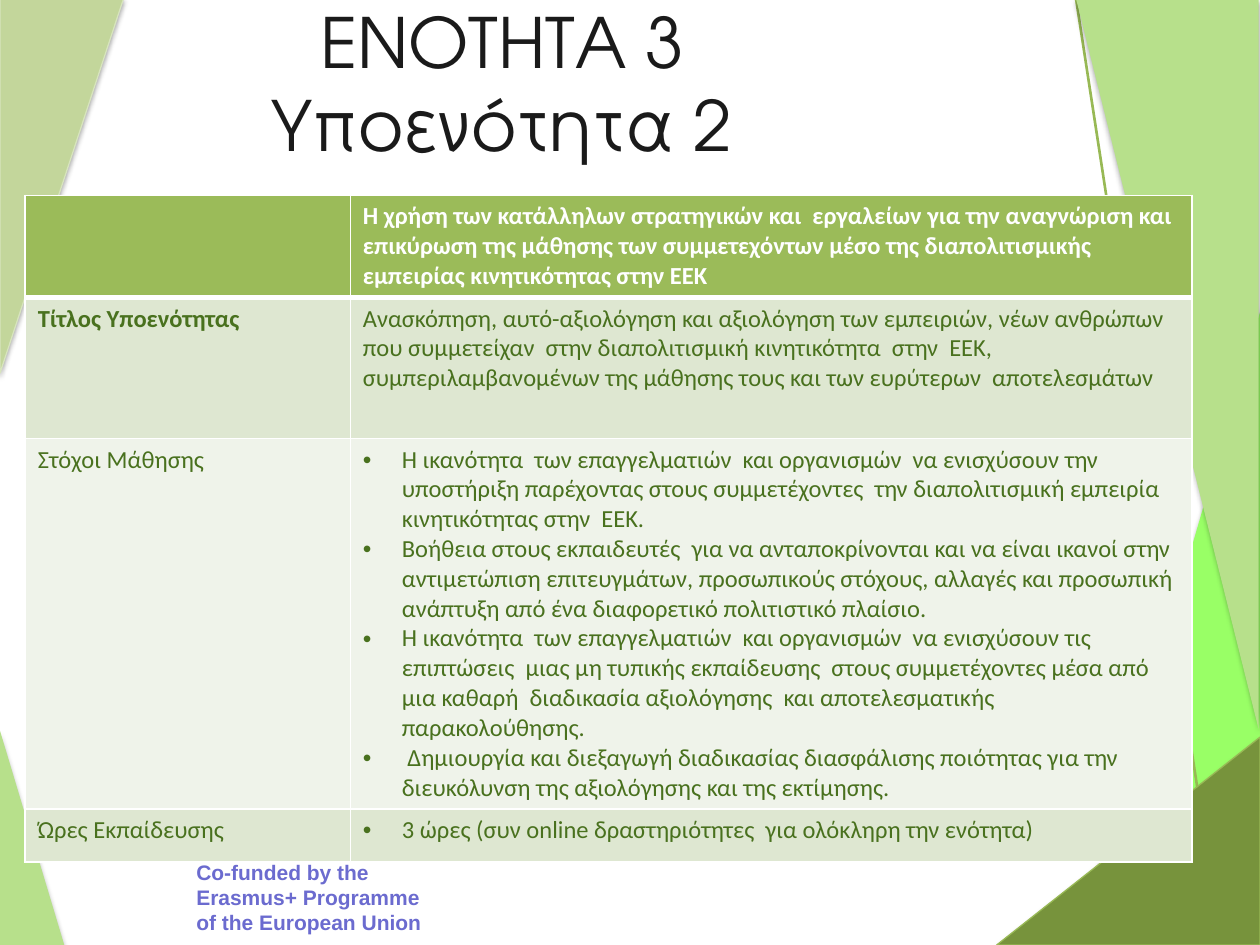
from lxml import etree
from pptx import Presentation
from pptx import util as u
from pptx.dml.color import RGBColor
from pptx.enum import shapes, text
from pptx.oxml.ns import qn

WHITE = RGBColor(0xFF, 0xFF, 0xFF)
INK = RGBColor(0x1A, 0x1A, 0x1A)
VIOLET = RGBColor(0x6B, 0x6B, 0xCF)
LEAF = RGBColor(0x49, 0x71, 0x1E)
HEAD = RGBColor(0x9B, 0xBB, 0x59)
BAND = RGBColor(0xDE, 0xE7, 0xD1)
PALE = RGBColor(0xEF, 0xF3, 0xEA)
EDGE = RGBColor(0x98, 0xB9, 0x55)
NEON = RGBColor(0x99, 0xFF, 0x66)
LIME = RGBColor(0xB7, 0xE0, 0x8B)
SAGE = RGBColor(0xC3, 0xD6, 0x9B)
MIST = RGBColor(0xD7, 0xE4, 0xBD)
MOSS = RGBColor(0x77, 0x93, 0x3C)

COLS = [2.58, 6.68]
ROWS = [0.8, 1.12, 2.92, 0.42]
GOALS = [
    "Η ικανότητα  των επαγγελματιών  και οργανισμών  να ενισχύσουν την υποστήριξη "
    "παρέχοντας στους συμμετέχοντες  την διαπολιτισμική εμπειρία κινητικότητας στην  ΕΕΚ.",
    "Βοήθεια στους εκπαιδευτές  για να ανταποκρίνονται και να είναι ικανοί στην "
    "αντιμετώπιση επιτευγμάτων, προσωπικούς στόχους, αλλαγές και προσωπική ανάπτυξη "
    "από ένα διαφορετικό πολιτιστικό πλαίσιο.",
    "Η ικανότητα  των επαγγελματιών  και οργανισμών  να ενισχύσουν τις επιπτώσεις  "
    "μιας μη τυπικής εκπαίδευσης  στους συμμετέχοντες μέσα από μια καθαρή  διαδικασία "
    "αξιολόγησης  και αποτελεσματικής παρακολούθησης.",
    " Δημιουργία και διεξαγωγή διαδικασίας διασφάλισης ποιότητας για την διευκόλυνση "
    "της αξιολόγησης και της εκτίμησης.",
]
# Each row: fill, label, lines, format of the label, format of the lines
BODY = [
    (HEAD, "", ["Η χρήση των κατάλληλων στρατηγικών και  εργαλείων για την αναγνώριση και "
                "επικύρωση της μάθησης των συμμετεχόντων μέσο της διαπολιτισμικής "
                "εμπειρίας κινητικότητας στην ΕΕΚ"], {}, {"color": WHITE, "bold": True}),
    (BAND, "Τίτλος Υποενότητας",
     ["Ανασκόπηση, αυτό-αξιολόγηση και αξιολόγηση των εμπειριών, νέων ανθρώπων που "
      "συμμετείχαν  στην διαπολιτισμική κινητικότητα  στην  ΕΕΚ, συμπεριλαμβανομένων "
      "της μάθησης τους και των ευρύτερων  αποτελεσμάτων"], {"bold": True}, {}),
    (PALE, "Στόχοι Μάθησης", GOALS, {}, {"bullet": True}),
    (BAND, "Ώρες Εκπαίδευσης",
     ["3 ώρες (συν online δραστηριότητες  για ολόκληρη την ενότητα)"], {}, {"bullet": True}),
]


def put(frame, lines, size=14, font="Calibri", color=LEAF, bold=False,
        align=None, bullet=False):
    """Fill a text frame with one paragraph per line."""
    for i, line in enumerate(lines):
        para = frame.add_paragraph() if i else frame.paragraphs[0]
        para.text = line
        para.alignment = align
        if bullet:
            props = para._p.get_or_add_pPr()
            props.set("marL", str(u.Inches(0.31)))
            props.set("indent", str(u.Inches(-0.31)))
            etree.SubElement(props, qn("a:buFont"), typeface="Arial")
            etree.SubElement(props, qn("a:buChar"), char="•")
        for run in para.runs:
            run.font.size = u.Pt(size)
            run.font.name = font
            run.font.bold = bold
            run.font.color.rgb = color


def paint(parent, color):
    """Add a solid fill element and return its colour."""
    fill = etree.SubElement(parent, qn("a:solidFill"))
    return etree.SubElement(fill, qn("a:srgbClr"), val=str(color))


def wedge(slide, box, fill, flip="", turn=0, line=None, alpha=35, dist=1.8):
    """Draw a right triangle with a soft shadow below it."""
    shape = slide.shapes.add_shape(shapes.MSO_SHAPE.RIGHT_TRIANGLE, *map(u.Inches, box))
    shape.rotation = turn
    for axis in flip:
        shape.element.spPr.xfrm.set("flip" + axis, "1")
    shape.fill.solid()
    shape.fill.fore_color.rgb = fill
    if line:
        shape.line.color.rgb = line
        shape.line.width = u.Pt(0.75)
    else:
        shape.line.fill.background()
    shape.shadow.inherit = False
    effect = shape.element.spPr.find(qn("a:effectLst"))
    shade = etree.SubElement(effect, qn("a:outerShdw"), blurRad=str(u.Pt(3.1)),
                             dist=str(u.Pt(dist)), dir="5400000", rotWithShape="0")
    etree.SubElement(paint_shade(shade), qn("a:alpha"), val=str(alpha * 1000))


def paint_shade(shade):
    """Give a shadow its black colour."""
    return etree.SubElement(shade, qn("a:srgbClr"), val="000000")


def stroke(slide, *ends):
    """Draw a thin green line."""
    line = slide.shapes.add_connector(shapes.MSO_CONNECTOR.STRAIGHT, *map(u.Inches, ends))
    line.line.color.rgb = EDGE
    line.line.width = u.Pt(1.5)
    etree.SubElement(line.element.spPr, qn("a:effectLst"))


def dress(cell, fill, base):
    """Set white borders and the fill of a cell."""
    props = cell._tc.get_or_add_tcPr()
    for side in "LRTB":
        width = base if side == "B" else 1
        paint(etree.SubElement(props, qn("a:ln" + side), w=str(u.Pt(width))), WHITE)
    cell.fill.solid()
    cell.fill.fore_color.rgb = fill


def grid(slide):
    """Build the table of the subunit."""
    area = map(u.Inches, (0.2, 1.55, sum(COLS), sum(ROWS)))
    table = slide.shapes.add_table(len(ROWS), len(COLS), *area).table
    for col, width in zip(table.columns, COLS):
        col.width = u.Inches(width)
    for i, (fill, label, lines, left, right) in enumerate(BODY):
        table.rows[i].height = u.Inches(ROWS[i])
        for j, (words, style) in enumerate((([label], left), (lines, right))):
            cell = table.cell(i, j)
            dress(cell, fill, 1 if i else 3)
            put(cell.text_frame, words, **style)


def decor(slide):
    """Draw the side wedges, the lines and the funding note."""
    wedge(slide, (8.54, 2.41, 1.48, 5.09), NEON, "H", alpha=38, dist=1.6)
    note = slide.shapes.add_textbox(*map(u.Inches, (1.46, 6.77, 2, 0.71))).text_frame
    note.word_wrap = True
    put(note, ["Co-funded by the Erasmus+ Programme of the European Union"],
        size=12, font="Arial", color=VIOLET, bold=True)
    wedge(slide, (0, 5.8, 0.51, 1.7), LIME)
    wedge(slide, (0, -0.01, 0.98, 2.97), SAGE, "H", turn=180, line=MIST)
    stroke(slide, 8.96, 7.5, 9.3, 2.1)
    stroke(slide, 9.65, 7.21, 8.54, -0.01)
    wedge(slide, (8.54, -0.01, 1.45, 5.8), LIME, "HV")
    wedge(slide, (7.91, 5.85, 2.09, 1.65), MOSS, "V", turn=180, line=EDGE)


def head(slide):
    """Place the title above the side wedges."""
    title = slide.shapes.title
    title.left, title.top, title.width, title.height = map(u.Inches, (0.75, 0.03, 6.47, 1.25))
    frame = title.text_frame
    frame.auto_size = text.MSO_AUTO_SIZE.NONE
    frame.vertical_anchor = text.MSO_ANCHOR.MIDDLE
    put(frame, ["ΕΝΟΤΗΤΑ 3\vΥποενότητα 2"], size=39.6, font="TeX Gyre Adventor",
        color=INK, align=text.PP_ALIGN.CENTER)
    slide.shapes._spTree.append(title.element)


def main():
    deck = Presentation()
    deck.slide_width, deck.slide_height = u.Inches(10), u.Inches(7.5)
    slide = deck.slides.add_slide(deck.slide_layouts[5])
    decor(slide)
    head(slide)
    grid(slide)
    deck.save("out.pptx")


if __name__ == "__main__":
    main()
